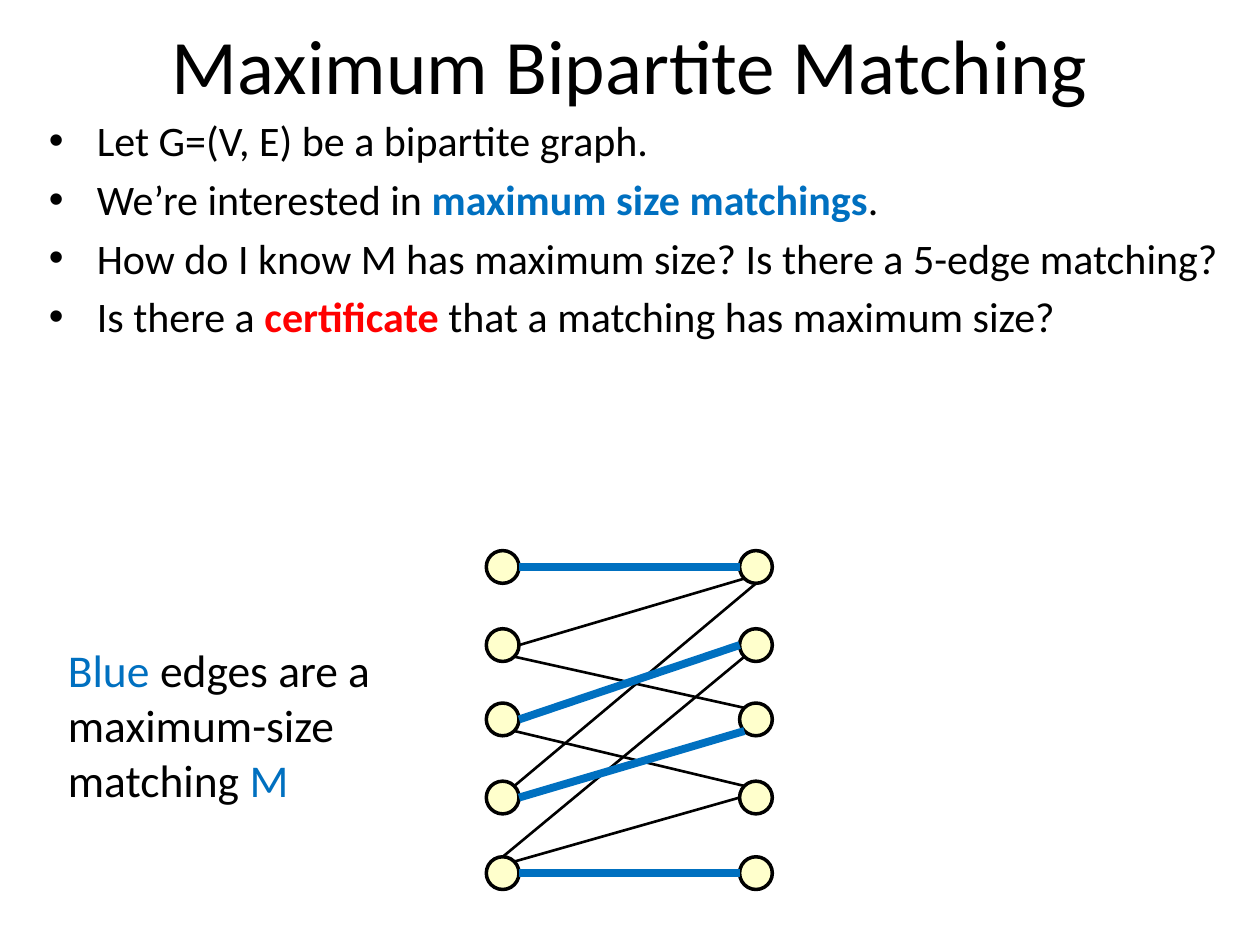
from math import cos, radians, sin

from lxml import etree
from pptx import Presentation
from pptx.dml.color import RGBColor
from pptx.enum.shapes import MSO_CONNECTOR, MSO_SHAPE
from pptx.enum.text import MSO_ANCHOR, PP_ALIGN
from pptx.oxml.ns import qn
from pptx.util import Inches, Pt

LINE = MSO_CONNECTOR.STRAIGHT
OVAL = MSO_SHAPE.OVAL
TOP, MIDDLE = MSO_ANCHOR.TOP, MSO_ANCHOR.MIDDLE
LEFT, CENTER = PP_ALIGN.LEFT, PP_ALIGN.CENTER

WIDTH, HEIGHT = 10, 7.5
FONT = "Calibri"
BLACK, BLUE, RED, CREAM = "000000", "0070C0", "FF0000", "FFFFCC"
COLUMNS = (0.4 * WIDTH - 0.01, 0.6 * WIDTH)
ROWS = (4.5, 5.12, 5.71, 6.33, 6.93)
RADIUS = 0.13
ANGLES = {"E": 0, "SE": 45, "S": 90, "SW": 135, "W": 180, "NW": 225, "N": 270, "NE": 315}

PLAIN_EDGES = [
    (4, "NE", 1, "S"),
    (2, "SE", 3, "NW"),
    (5, "NE", 4, "W"),
    (2, "E", 1, "SW"),
    (5, "N", 2, "SW"),
    (3, "SE", 4, "NW"),
]
MATCHING = [(1, "E", 1, "W"), (3, "E", 2, "W"), (4, "E", 3, "SW"), (5, "E", 5, "W")]

BULLETS = [
    [("Let G=(V, E) be a bipartite graph.", BLACK, False)],
    [
        ("We’re interested in ", BLACK, False),
        ("maximum size matchings", BLUE, True),
        (".", BLACK, False),
    ],
    [("How do I know M has maximum size? Is there a 5-edge matching?", BLACK, False)],
    [
        ("Is there a ", BLACK, False),
        ("certificate", RED, True),
        (" that a matching has maximum size?", BLACK, False),
    ],
]
CAPTION = [
    ("Blue ", BLUE, False),
    ("edges are a maximum-size matching ", BLACK, False),
    ("M", BLUE, False),
]


def color(value):
    return RGBColor.from_string(value)


def add_bullet(p):
    p.space_before = Pt(4.8)
    pPr = p._p.get_or_add_pPr()
    pPr.set("marL", str(Inches(0.38)))
    pPr.set("indent", str(-Inches(0.38)))
    etree.SubElement(pPr, qn("a:buFont"), typeface="Arial")
    etree.SubElement(pPr, qn("a:buChar"), char="•")


def add_text(s, box, paragraphs, size, align=LEFT, anchor=TOP, bulleted=False):
    tf = s.shapes.add_textbox(*map(Inches, box)).text_frame
    tf.word_wrap = True
    tf.vertical_anchor = anchor
    for i, runs in enumerate(paragraphs):
        p = tf.add_paragraph() if i else tf.paragraphs[0]
        p.alignment = align
        if bulleted:
            add_bullet(p)
        for text, tint, bold in runs:
            r = p.add_run()
            r.text = text
            r.font.name, r.font.size, r.font.bold = FONT, Pt(size), bold
            r.font.color.rgb = color(tint)


def add_node(s, x, y):
    box = (x - RADIUS, y - RADIUS, 2 * RADIUS, 2 * RADIUS)
    sp = s.shapes.add_shape(OVAL, *map(Inches, box))
    sp.shadow.inherit = False
    sp.fill.solid()
    sp.fill.fore_color.rgb = color(CREAM)
    sp.line.color.rgb = color(BLACK)
    sp.line.width = Pt(2)


def rim_point(column, row, side):
    angle = radians(ANGLES[side])
    return COLUMNS[column] + RADIUS * cos(angle), ROWS[row - 1] + RADIUS * sin(angle)


def add_edge(s, edge, tint, width):
    left_row, left_side, right_row, right_side = edge
    ends = rim_point(0, left_row, left_side) + rim_point(1, right_row, right_side)
    line = s.shapes.add_connector(LINE, *map(Inches, ends))
    line.line.color.rgb = color(tint)
    line.line.width = Pt(width)
    etree.SubElement(line._element.spPr, qn("a:effectLst"))


def main():
    prs = Presentation()
    prs.slide_width, prs.slide_height = Inches(WIDTH), Inches(HEIGHT)
    s = prs.slides.add_slide(prs.slide_layouts[6])
    title = [[("Maximum Bipartite Matching", BLACK, False)]]
    add_text(s, (0.5, 0, 9, 1.01), title, 44, CENTER, MIDDLE)
    add_text(s, (0.29, 0.86, 9.51, 2.29), BULLETS, 24, bulleted=True)
    for x in COLUMNS:
        for y in ROWS:
            add_node(s, x, y)
    for edge in PLAIN_EDGES:
        add_edge(s, edge, BLACK, 1.5)
    for edge in MATCHING:
        add_edge(s, edge, BLUE, 4.5)
    add_text(s, (0.44, 5.05, 3.11, 1.41), [CAPTION], 26)
    prs.save("out.pptx")


if __name__ == "__main__":
    main()
